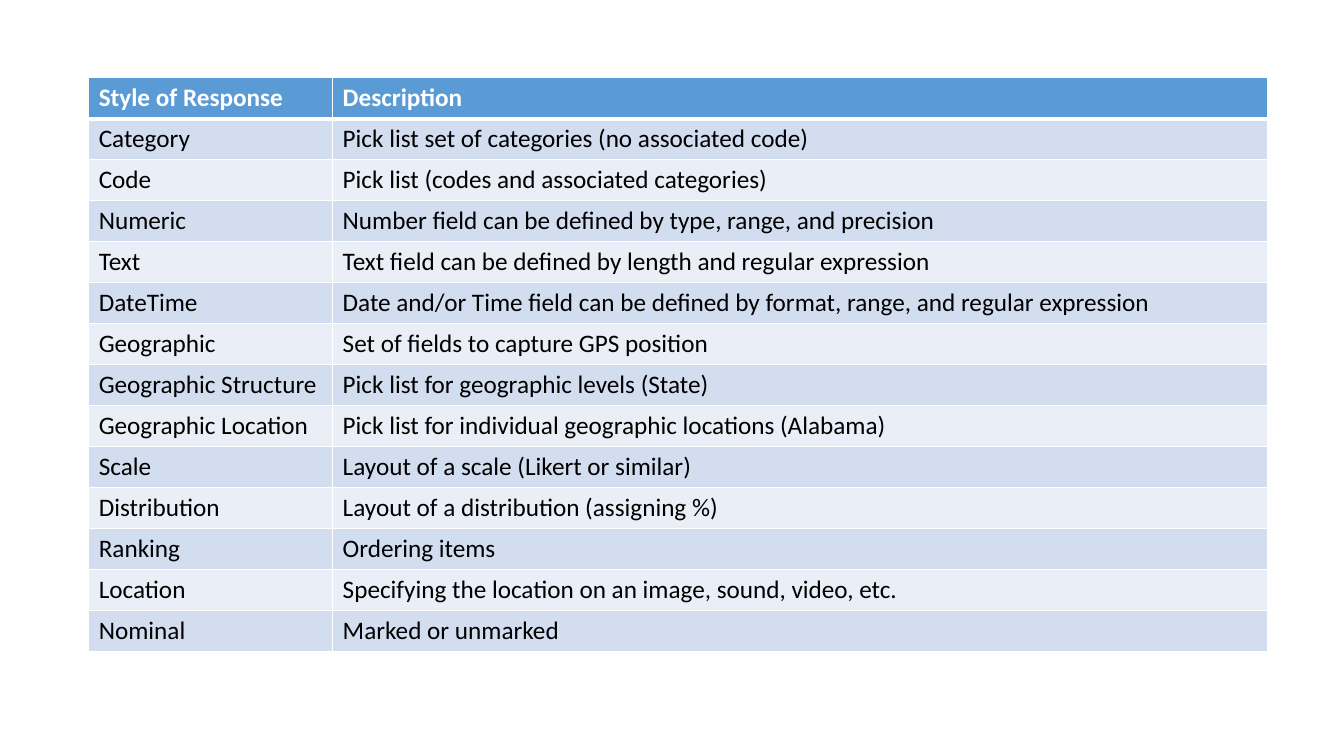
from lxml import etree
from pptx import Presentation
from pptx import util as u
from pptx.dml.color import RGBColor
from pptx.oxml import ns

WHITE = RGBColor(0xFF, 0xFF, 0xFF)
BLACK = RGBColor(0x00, 0x00, 0x00)
HEADER_BLUE = RGBColor(0x5B, 0x9B, 0xD5)
BANDS = (RGBColor(0xD2, 0xDE, 0xEF), RGBColor(0xEA, 0xEF, 0xF7))
THIN, THICK = 1, 3

RESPONSE_STYLES = [
    ("Style of Response", "Description"),
    ("Category", "Pick list set of categories (no associated code)"),
    ("Code", "Pick list (codes and associated categories)"),
    ("Numeric", "Number field can be defined by type, range, and precision"),
    ("Text", "Text field can be defined by length and regular expression"),
    ("DateTime", "Date and/or Time field can be defined by format, range, and regular expression"),
    ("Geographic", "Set of fields to capture GPS position"),
    ("Geographic Structure", "Pick list for geographic levels (State)"),
    ("Geographic Location", "Pick list for individual geographic locations (Alabama)"),
    ("Scale", "Layout of a scale (Likert or similar)"),
    ("Distribution", "Layout of a distribution (assigning %)"),
    ("Ranking", "Ordering items"),
    ("Location", "Specifying the location on an image, sound, video, etc."),
    ("Nominal", "Marked or unmarked"),
]


class SlideBuilder:
    """Draws on one page; lengths are percentages of its width or height."""

    font = "Calibri"
    size = u.Pt(18)

    def __init__(self, deck):
        self.deck = deck
        self.page = deck.slides.add_slide(deck.slide_layouts[6])

    def across(self, percent):
        return round(self.deck.slide_width * percent / 100)

    def down(self, percent):
        return round(self.deck.slide_height * percent / 100)

    def table(self, records, left, top, widths, row_height):
        frame = self.page.shapes.add_table(
            len(records), len(widths), self.across(left), self.down(top),
            self.across(sum(widths)), self.down(row_height * len(records)))
        grid = frame.table
        for column, width in zip(grid.columns, widths):
            column.width = self.across(width)
        for index, record in enumerate(records):
            grid.rows[index].height = self.down(row_height)
            for cell, wording in zip(grid.rows[index].cells, record):
                self.cell(cell, wording, index)

    def cell(self, cell, wording, index):
        is_header = index == 0
        self.borders(cell, top=THICK if index == 1 else THIN,
                     bottom=THICK if is_header else THIN)
        cell.fill.solid()
        cell.fill.fore_color.rgb = HEADER_BLUE if is_header else BANDS[(index - 1) % 2]
        cell.text_frame.text = wording
        font = cell.text_frame.paragraphs[0].runs[0].font
        font.name, font.size, font.bold = self.font, self.size, is_header
        font.color.rgb = WHITE if is_header else BLACK

    def borders(self, cell, top, bottom):
        properties = cell._tc.get_or_add_tcPr()
        for side, points in zip("LRTB", (THIN, THIN, top, bottom)):
            line = etree.SubElement(properties, ns.qn(f"a:ln{side}"), w=str(u.Pt(points)))
            fill = etree.SubElement(line, ns.qn("a:solidFill"))
            etree.SubElement(fill, ns.qn("a:srgbClr"), val=str(WHITE))


def main():
    deck = Presentation()
    deck.slide_width, deck.slide_height = u.Inches(13.33), u.Inches(7.5)
    builder = SlideBuilder(deck)
    builder.table(RESPONSE_STYLES, left=6.6, top=10.3, widths=(18.15, 69.6), row_height=5.42)
    deck.save("out.pptx")


if __name__ == "__main__":
    main()
